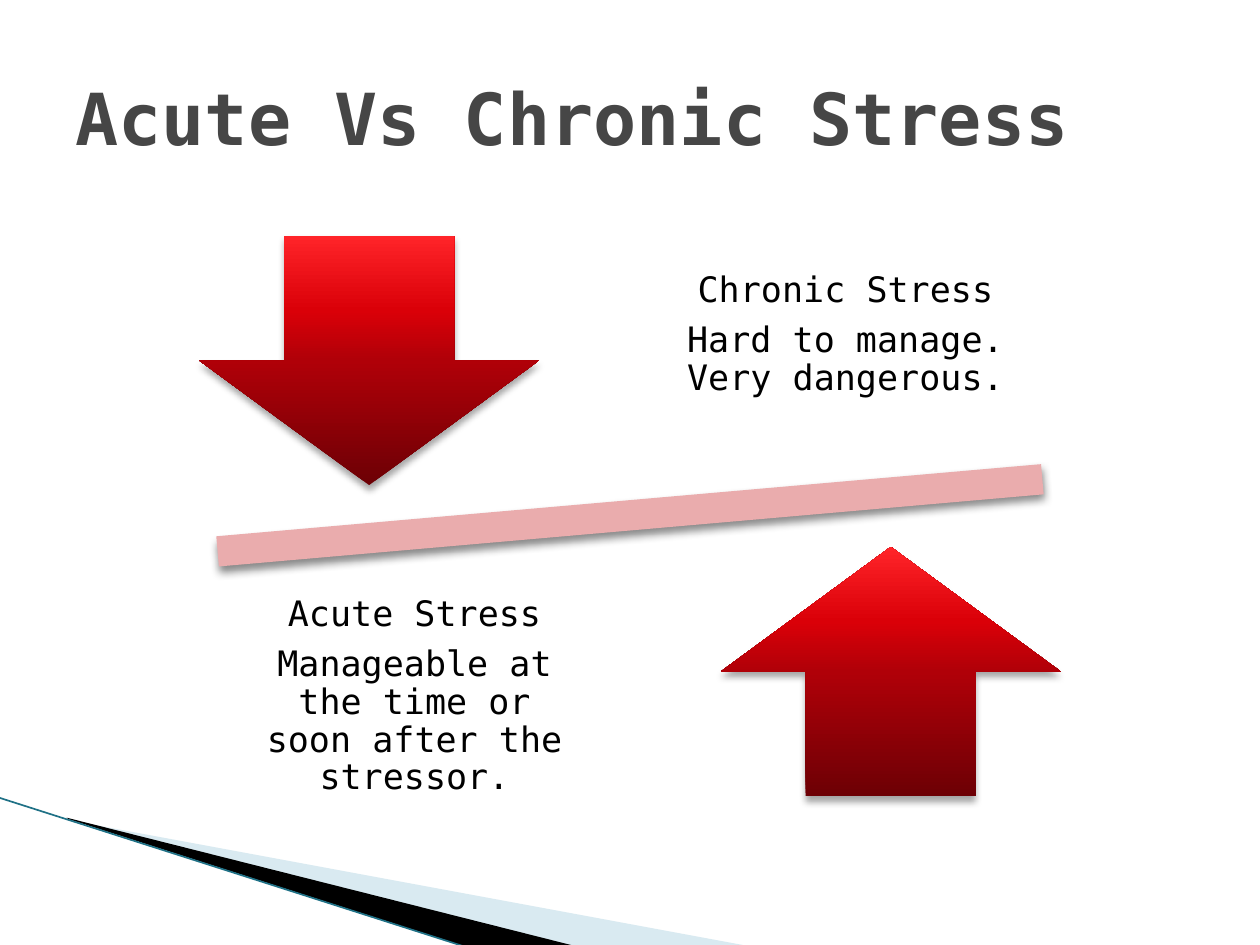
from lxml import etree
from pptx import Presentation
from pptx.dml.color import RGBColor
from pptx.enum.shapes import MSO_CONNECTOR, MSO_SHAPE
from pptx.enum.text import MSO_ANCHOR, PP_ALIGN
from pptx.oxml import parse_xml
from pptx.oxml.ns import nsdecls, qn
from pptx.util import Inches, Pt

RED_STOPS = [(0, "6D0005"), (50, "B00008"), (70, "DA0008"), (100, "FF2429")]


def color(value):
    return RGBColor.from_string(value)


class SlideBuilder:
    font = "DejaVu Sans Mono"

    def __init__(self, slide):
        self.s = slide

    def freeform(self, points, fill, alpha=100):
        pts = [(Inches(x), Inches(y)) for x, y in points]
        builder = self.s.shapes.build_freeform(*pts[0], scale=1.0)
        builder.add_line_segments(pts[1:], close=True)
        sp = builder.convert_to_shape()
        sp.shadow.inherit = False
        sp.fill.solid()
        sp.fill.fore_color.rgb = color(fill)
        sp.line.fill.background()
        if alpha < 100:
            clr = sp.fill._xPr.find(qn("a:solidFill"))[0]
            etree.SubElement(clr, qn("a:alpha")).set("val", str(alpha * 1000))

    def line(self, x1, y1, x2, y2, stroke, width):
        cn = self.s.shapes.add_connector(
            MSO_CONNECTOR.STRAIGHT, Inches(x1), Inches(y1), Inches(x2), Inches(y2))
        cn.line.color.rgb = color(stroke)
        cn.line.width = Pt(width)
        etree.SubElement(cn._element.spPr, qn("a:effectLst"))

    def shape(self, kind, x, y, w, h, shadow_alpha, blur):
        sp = self.s.shapes.add_shape(kind, Inches(x), Inches(y), Inches(w), Inches(h))
        sp.line.fill.background()
        sp.shadow.inherit = False
        effects = sp._element.spPr.find(qn("a:effectLst"))
        effects.append(parse_xml(
            f'<a:outerShdw {nsdecls("a")} blurRad="{Pt(blur)}" dist="{Pt(3)}" '
            f'dir="5400000" rotWithShape="0"><a:srgbClr val="000000">'
            f'<a:alpha val="{shadow_alpha * 1000}"/></a:srgbClr></a:outerShdw>'))
        return sp

    def bar(self, x, y, w, h, fill, rotation):
        sp = self.shape(MSO_SHAPE.MATH_MINUS, x, y, w, h, 45, 5)
        sp.fill.solid()
        sp.fill.fore_color.rgb = color(fill)
        sp.rotation = rotation

    def arrow(self, kind, x, y):
        sp = self.shape(kind, x, y, 2.7, 1.98, 35, 4)
        sp.fill.gradient()
        sp.fill.gradient_angle = 90
        stops = sp._element.spPr.find(qn("a:gradFill")).find(qn("a:gsLst"))
        for old in list(stops):
            stops.remove(old)
        for pos, value in RED_STOPS:
            gs = etree.SubElement(stops, qn("a:gs"), pos=str(pos * 1000))
            etree.SubElement(gs, qn("a:srgbClr"), val=value)

    def text(self, x, y, w, h, lines, size, fill="000000", bold=False,
             align=PP_ALIGN.LEFT, inset=None, spacing=None, after=None):
        box = self.s.shapes.add_textbox(Inches(x), Inches(y), Inches(w), Inches(h))
        tf = box.text_frame
        tf.word_wrap = True
        tf.vertical_anchor = MSO_ANCHOR.MIDDLE
        if inset is not None:
            tf.margin_left = tf.margin_right = Inches(inset)
            tf.margin_top = tf.margin_bottom = Inches(inset)
        for i, line in enumerate(lines):
            p = tf.add_paragraph() if i else tf.paragraphs[0]
            p.alignment = align
            p.line_spacing = spacing
            p.space_after = after
            r = p.add_run()
            r.text = line
            r.font.name = self.font
            r.font.size = Pt(size)
            r.font.bold = bold
            r.font.color.rgb = color(fill)

    def label(self, x, y, heading, body):
        self.text(x, y, 2.88, 2.08, [heading, body], 20, align=PP_ALIGN.CENTER,
                  inset=0.16, spacing=0.9, after=Pt(7))


def main():
    prs = Presentation()
    prs.slide_width, prs.slide_height = Inches(10), Inches(7.5)
    b = SlideBuilder(prs.slides.add_slide(prs.slide_layouts[6]))

    b.freeform([(0.55, 6.51), (5.95, 7.51), (4.56, 7.51), (0.55, 6.5)], "A0CBDC", 40)
    b.freeform([(0.53, 6.49), (4.57, 7.51), (3.72, 7.52), (0.54, 6.5)], "000000")
    b.line(-0.01, 6.33, 3.71, 7.52, "1F7186", 0.95)

    b.bar(0.53, 3.58, 8.94, 1.02, "EAACAD", 355)
    b.arrow(MSO_SHAPE.DOWN_ARROW, 1.58, 1.87)
    b.label(5.27, 1.62, "Chronic Stress", "Hard to manage. Very dangerous.")
    b.arrow(MSO_SHAPE.UP_ARROW, 5.72, 4.34)
    b.label(1.85, 4.49, "Acute Stress",
            "Manageable at the time or soon after the stressor.")
    b.text(0.5, 0.3, 9, 1.25, ["Acute Vs Chronic Stress"], 41, "464646", bold=True)

    prs.save("out.pptx")


if __name__ == "__main__":
    main()
